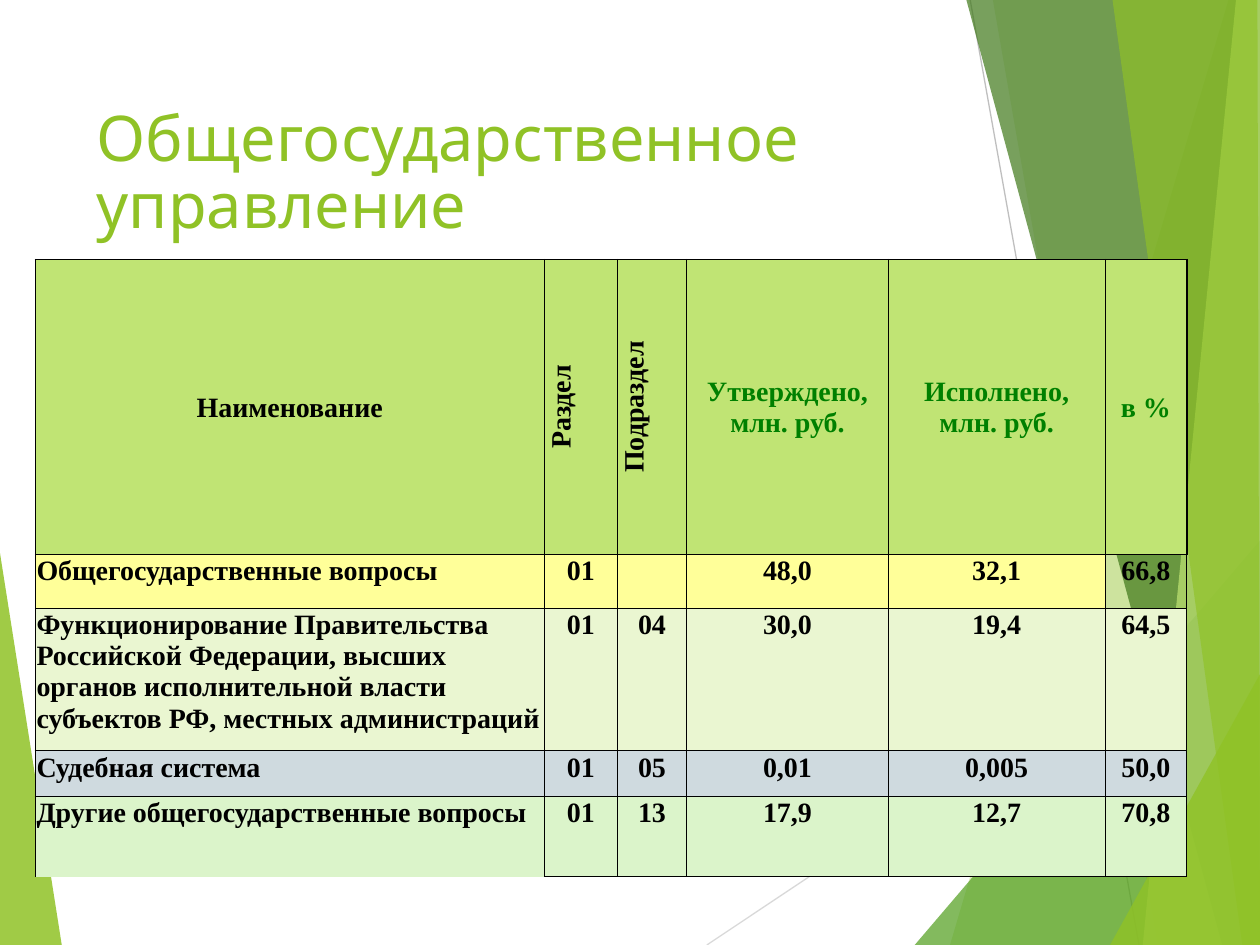
from lxml import etree
from pptx import Presentation
from pptx.dml.color import RGBColor
from pptx.enum.shapes import MSO_CONNECTOR
from pptx.enum.text import MSO_ANCHOR, PP_ALIGN
from pptx.oxml.ns import qn
from pptx.util import Inches, Pt

BLACK = RGBColor(0x00, 0x00, 0x00)
GREEN = RGBColor(0x90, 0xC2, 0x26)
MID_GREEN = RGBColor(0x54, 0xA0, 0x21)
DARK_GREEN = RGBColor(0x3F, 0x78, 0x19)
LIME = RGBColor(0xC0, 0xE4, 0x74)
HEAD_GREEN = RGBColor(0x00, 0x80, 0x00)
YELLOW = RGBColor(0xFF, 0xFF, 0x99)
PALE_LIME = RGBColor(0xEA, 0xF6, 0xD1)
BLUE_GREY = RGBColor(0xCF, 0xDA, 0xDF)
MINT = RGBColor(0xDB, 0xF4, 0xCA)
LIGHT_GREY = RGBColor(0xD9, 0xD9, 0xD9)
GREY = RGBColor(0xBF, 0xBF, 0xBF)

TITLE = "Общегосударственное управление"
HEADERS = ["Наименование", "Раздел", "Подраздел", "Утверждено,\nмлн. руб.",
           "Исполнено,\nмлн. руб.", "в %"]
ROWS = [
    ["Общегосударственные вопросы", "01", "", "48,0", "32,1", "66,8"],
    ["Функционирование Правительства Российской Федерации, высших органов "
     "исполнительной власти субъектов РФ, местных администраций",
     "01", "04", "30,0", "19,4", "64,5"],
    ["Судебная система", "01", "05", "0,01", "0,005", "50,0"],
    ["Другие общегосударственные вопросы", "01", "13", "17,9", "12,7", "70,8"],
]
ROW_FILLS = [LIME, YELLOW, PALE_LIME, BLUE_GREY, MINT]
COL_WIDTHS = [4.04, 0.58, 0.55, 1.6, 1.72, 0.65]
ROW_HEIGHTS = [2.34, 0.43, 1.13, 0.36, 0.64]
VERTICAL_HEADERS = (1, 2)
GREEN_HEADERS = (3, 4, 5)
UNFILLED_CELL = (1, 5)

# start, end, colour
RAYS = [((5.61, 7.5), (10, 4.57), LIGHT_GREY), ((7.7, 0), (9.04, 7.5), GREY)]
# corners, colour, opacity in percent
FACETS = [
    ([(0, 4.39), (0.49, 7.5), (0, 7.5)], GREEN, 85),
    ([(9.75, 0), (7.54, 7.5), (10, 7.5), (10, 0)], GREEN, 30),
    ([(7.88, 0), (9.19, 7.5), (10, 7.5), (10, 0)], GREEN, 20),
    ([(7.26, 7.5), (10, 4.29), (10, 7.5)], MID_GREEN, 72),
    ([(7.67, 0), (9.7, 7.5), (10, 7.5), (10, 0)], DARK_GREEN, 70),
    ([(9.81, 0), (9.07, 7.5), (10, 7.5), (10, 0)], LIME, 70),
    ([(8.83, 0), (9.86, 7.5), (10, 7.5), (9.98, 0)], GREEN, 65),
    ([(8.81, 7.5), (10, 5.35), (10, 7.5)], GREEN, 80),
]


def add_ray(slide, start, end, color):
    line = slide.shapes.add_connector(
        MSO_CONNECTOR.STRAIGHT, *map(Inches, start + end))
    line.line.color.rgb = color
    line.line.width = Pt(0.75)
    etree.SubElement(line._element.spPr, qn("a:effectLst"))


def add_facet(slide, corners, color, opacity):
    points = [(Inches(x), Inches(y)) for x, y in corners]
    builder = slide.shapes.build_freeform(*points[0], scale=1.0)
    builder.add_line_segments(points[1:], close=True)
    sp = builder.convert_to_shape()
    sp.shadow.inherit = False
    sp.line.fill.background()
    sp.fill.solid()
    sp.fill.fore_color.rgb = color
    clr = sp._element.spPr.find(".//" + qn("a:srgbClr"))
    etree.SubElement(clr, qn("a:alpha"), val=str(opacity * 1000))


def write(tf, text, font="Times New Roman", size=16, color=BLACK, bold=True,
          align=PP_ALIGN.LEFT, spacing=None):
    for i, line in enumerate(text.split("\n")):
        p = tf.add_paragraph() if i else tf.paragraphs[0]
        p.alignment = align
        p.line_spacing = spacing
        if not line:
            continue
        r = p.add_run()
        r.text = line
        r.font.name = font
        r.font.size = Pt(size)
        r.font.bold = bold
        r.font.color.rgb = color


def set_borders(cell, **widths):
    """Draw black borders L, R, T, B of the given point widths; 0 hides one."""
    tcPr = cell._tc.get_or_add_tcPr()
    for side in "LRTB":
        width = widths[side]
        ln = etree.SubElement(tcPr, qn("a:ln" + side), w=str(Pt(width)))
        if width:
            fill = etree.SubElement(ln, qn("a:solidFill"))
            etree.SubElement(fill, qn("a:srgbClr"), val=str(BLACK))
        else:
            etree.SubElement(ln, qn("a:noFill"))


def format_cell(cell, row, col, text):
    header, first = row == 0, col == 0
    last_row, last_col = row == len(ROWS), col == len(HEADERS) - 1
    cell.margin_left = cell.margin_right = cell.margin_top = Inches(0.01)
    cell.margin_bottom = 0
    cell.vertical_anchor = MSO_ANCHOR.MIDDLE if header else MSO_ANCHOR.TOP
    if header and col in VERTICAL_HEADERS:
        cell._tc.get_or_add_tcPr().set("vert", "vert270")
    set_borders(
        cell,
        L=1 if (first and row != 1) or (header and col == 1) else 0.5,
        R=1 if header and (first or last_col) else 0.5,
        T=1 if row < 2 else 0.5,
        B=1 if header else 0 if first and last_row else 0.5)
    if (row, col) == UNFILLED_CELL:
        cell.fill.background()
    else:
        cell.fill.solid()
        cell.fill.fore_color.rgb = ROW_FILLS[row]
    write(cell.text_frame, text,
          color=HEAD_GREEN if header and col in GREEN_HEADERS else BLACK,
          align=PP_ALIGN.CENTER if header or not first else PP_ALIGN.LEFT)


def add_budget_table(slide):
    data = [HEADERS] + ROWS
    frame = slide.shapes.add_table(
        len(data), len(HEADERS), Inches(0.28), Inches(2.06),
        Inches(sum(COL_WIDTHS)), Inches(sum(ROW_HEIGHTS)))
    table = frame.table
    table.horz_banding = False
    for column, width in zip(table.columns, COL_WIDTHS):
        column.width = Inches(width)
    for i, (values, height) in enumerate(zip(data, ROW_HEIGHTS)):
        table.rows[i].height = Inches(height)
        for j, text in enumerate(values):
            format_cell(table.cell(i, j), i, j, text)


def main():
    prs = Presentation()
    prs.slide_width, prs.slide_height = Inches(10), Inches(7.5)
    slide = prs.slides.add_slide(prs.slide_layouts[6])

    add_facet(slide, *FACETS[0])
    for ray in RAYS:
        add_ray(slide, *ray)
    for facet in FACETS[1:]:
        add_facet(slide, *facet)

    title = slide.shapes.add_textbox(
        Inches(0.67), Inches(0.67), Inches(6.94), Inches(1.44))
    tf = title.text_frame
    tf.word_wrap = True
    tf.vertical_anchor = MSO_ANCHOR.MIDDLE
    write(tf, TITLE, font="Karla", size=36, color=GREEN, bold=False,
          spacing=0.88)

    add_budget_table(slide)
    prs.save("out.pptx")


if __name__ == "__main__":
    main()
